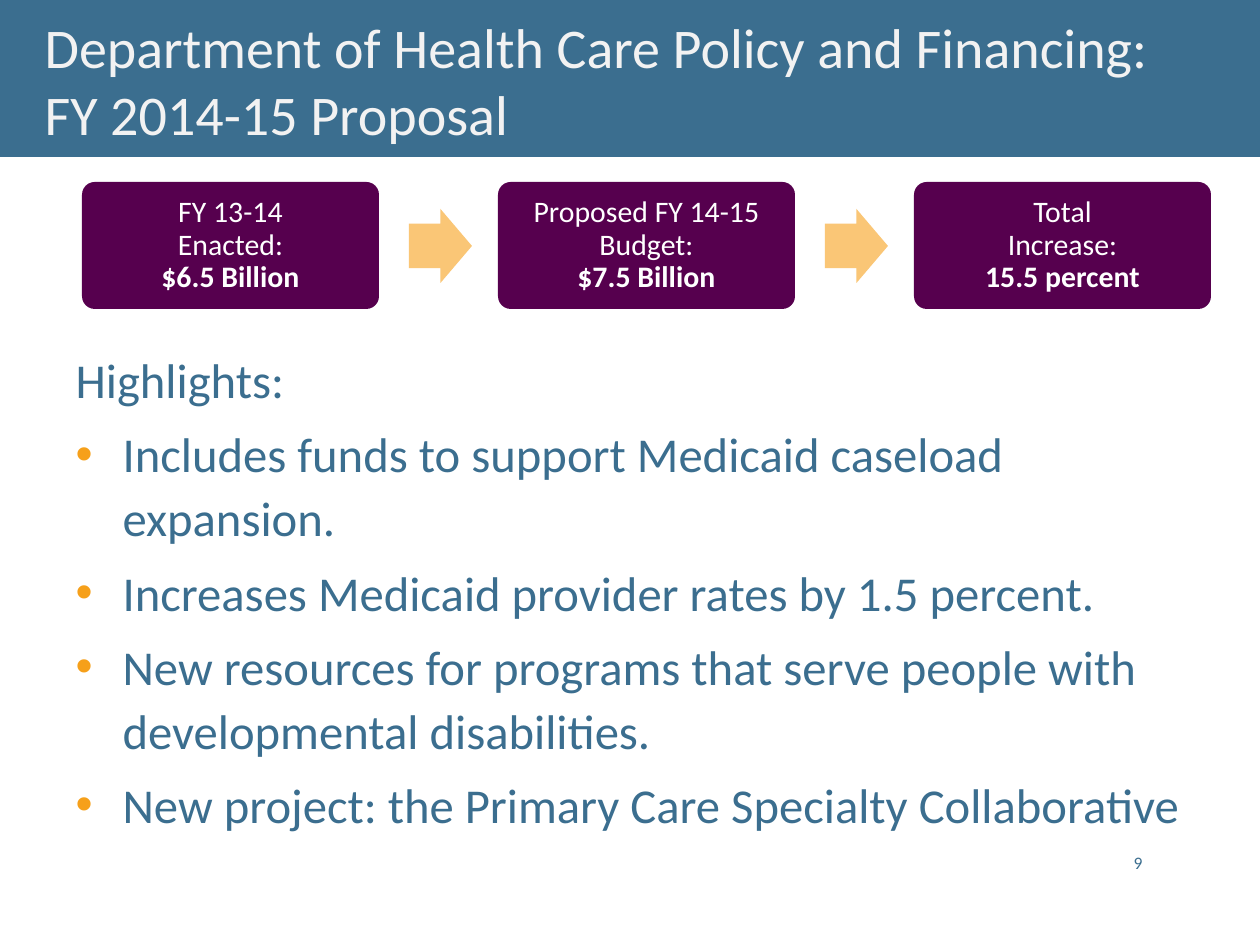
from copy import deepcopy

from lxml import etree
from pptx import Presentation
from pptx.dml.color import RGBColor
from pptx.enum.shapes import MSO_SHAPE
from pptx.enum.text import MSO_ANCHOR, MSO_AUTO_SIZE, PP_ALIGN
from pptx.oxml.ns import qn
from pptx.util import Emu, Pt

PX = 914400 / 126
RECT, CARD, ARROW = MSO_SHAPE.RECTANGLE, MSO_SHAPE.ROUNDED_RECTANGLE, MSO_SHAPE.RIGHT_ARROW
TOP, MIDDLE, BOTTOM = MSO_ANCHOR.TOP, MSO_ANCHOR.MIDDLE, MSO_ANCHOR.BOTTOM
LEFT, CENTER, RIGHT = PP_ALIGN.LEFT, PP_ALIGN.CENTER, PP_ALIGN.RIGHT
FIXED_SIZE = MSO_AUTO_SIZE.NONE
BLUE, PURPLE, PEACH, ORANGE = "3B6E8F", "56004E", "FAC676", "F6A01A"
OFF_WHITE, WHITE = "F2F2F2", "FFFFFF"


def px(length):
    return Emu(round(length * PX))


def color(hex_code):
    return RGBColor.from_string(hex_code)


class ProposalSlide:
    font = "Calibri"

    def __init__(self, slide):
        self.slide = slide

    def place(self, shape, box):
        for side, length in zip(("left", "top", "width", "height"), box):
            setattr(shape, side, px(length))

    def frame(self, shape, anchor):
        frame = shape.text_frame
        settings = {"word_wrap": True, "auto_size": FIXED_SIZE,
                    "vertical_anchor": anchor}
        for key, value in settings.items():
            setattr(frame, key, value)
        return frame

    def fill_paragraph(self, paragraph, text, size, hex_code, bold_end="", **layout):
        """Fill a paragraph; a vertical tab in the text is a line break."""
        paragraph.text = text
        for key, value in layout.items():
            setattr(paragraph, key, value)
        if bold_end:
            paragraph.add_run().text = bold_end
        for run in paragraph.runs:
            style = {"name": self.font, "size": Pt(size),
                     "bold": bool(bold_end) and run.text == bold_end}
            for key, value in style.items():
                setattr(run.font, key, value)
            run.font.color.rgb = color(hex_code)
        # Breaks take the size of the text around them
        for line_break in paragraph._p.findall(qn("a:br")):
            line_break.append(deepcopy(paragraph.runs[0]._r.rPr))

    def shape(self, kind, box, fill, adjustments=()):
        shape = self.slide.shapes.add_shape(kind, *map(px, box))
        shape.shadow.inherit = False
        shape.fill.solid()
        shape.fill.fore_color.rgb = color(fill)
        shape.line.fill.background()
        for index, value in enumerate(adjustments):
            shape.adjustments[index] = value
        return shape

    def band(self, box, fill):
        band = self.shape(RECT, box, fill)
        self.slide.shapes._spTree.insert(2, band._element)  # behind the title

    def title(self, text, box):
        title = self.slide.shapes.title
        self.place(title, box)
        frame = self.frame(title, MIDDLE)
        self.fill_paragraph(frame.paragraphs[0], text, 32, OFF_WHITE, alignment=LEFT)

    def card(self, box, label, amount):
        card = self.shape(CARD, box, PURPLE, [0.1])
        frame = self.frame(card, MIDDLE)
        for side in ("left", "right", "top", "bottom"):
            setattr(frame, f"margin_{side}", px(13))
        self.fill_paragraph(frame.paragraphs[0], label + "\v", 17, WHITE, amount,
                            alignment=CENTER, line_spacing=0.9)

    def bullet(self, paragraph, indent):
        properties = paragraph._p.get_or_add_pPr()
        properties.set("marL", str(px(indent)))
        properties.set("indent", str(-px(indent)))
        bullet_color = etree.SubElement(properties, qn("a:buClr"))
        etree.SubElement(bullet_color, qn("a:srgbClr"), val=ORANGE)
        etree.SubElement(properties, qn("a:buFont"), typeface="Arial")
        etree.SubElement(properties, qn("a:buChar"), char="•")

    def highlights(self, heading, items, box):
        body = self.slide.placeholders[1]
        self.place(body, box)
        frame = self.frame(body, TOP)
        for index, text in enumerate([heading, *items]):
            paragraph = frame.add_paragraph() if index else frame.paragraphs[0]
            if index:
                self.bullet(paragraph, 47)
            else:
                properties = paragraph._p.get_or_add_pPr()
                properties.set("marL", "0")
                properties.set("indent", "0")
                etree.SubElement(properties, qn("a:buNone"))
            self.fill_paragraph(paragraph, text, 27.8, BLUE, line_spacing=1.1,
                                space_before=Pt(5.6 if index else 0))

    def page_number(self, text, box):
        number = self.slide.shapes.add_textbox(*map(px, box))
        frame = self.frame(number, BOTTOM)
        self.fill_paragraph(frame.paragraphs[0], text, 10, BLUE, alignment=RIGHT)


def main():
    deck = Presentation()
    deck.slide_width, deck.slide_height = px(1260), px(945)
    page = ProposalSlide(deck.slides.add_slide(deck.slide_layouts[1]))

    # Title band
    page.band((0, 0, 1260, 157), BLUE)
    page.title("Department of Health Care Policy and Financing:\vFY 2014-15 Proposal",
               (32, 5, 1165, 149))

    # Budget steps, with an arrow between neighbours
    steps = [("FY 13-14\vEnacted:", "$6.5 Billion"),
             ("Proposed FY 14-15 Budget:", "$7.5 Billion"),
             ("Total\vIncrease:", "15.5 percent")]
    first_left, pitch = 82, 416
    for index, (label, amount) in enumerate(steps):
        left = first_left + index * pitch
        if index:
            page.shape(ARROW, (left - 89, 209, 63, 74), PEACH, [0.6, 0.5])
        page.card((left, 182, 297, 127), label, amount)

    # Highlights
    page.highlights("Highlights:", [
        "Includes funds to support Medicaid caseload expansion.",
        "Increases Medicaid provider rates by 1.5 percent.",
        "New resources for programs that serve people with developmental disabilities.",
        "New project: the Primary Care Specialty Collaborative",
    ], (63, 338, 1134, 582))

    # Page number
    page.page_number("9", (1105, 829, 50, 50))
    deck.save("out.pptx")


if __name__ == "__main__":
    main()
